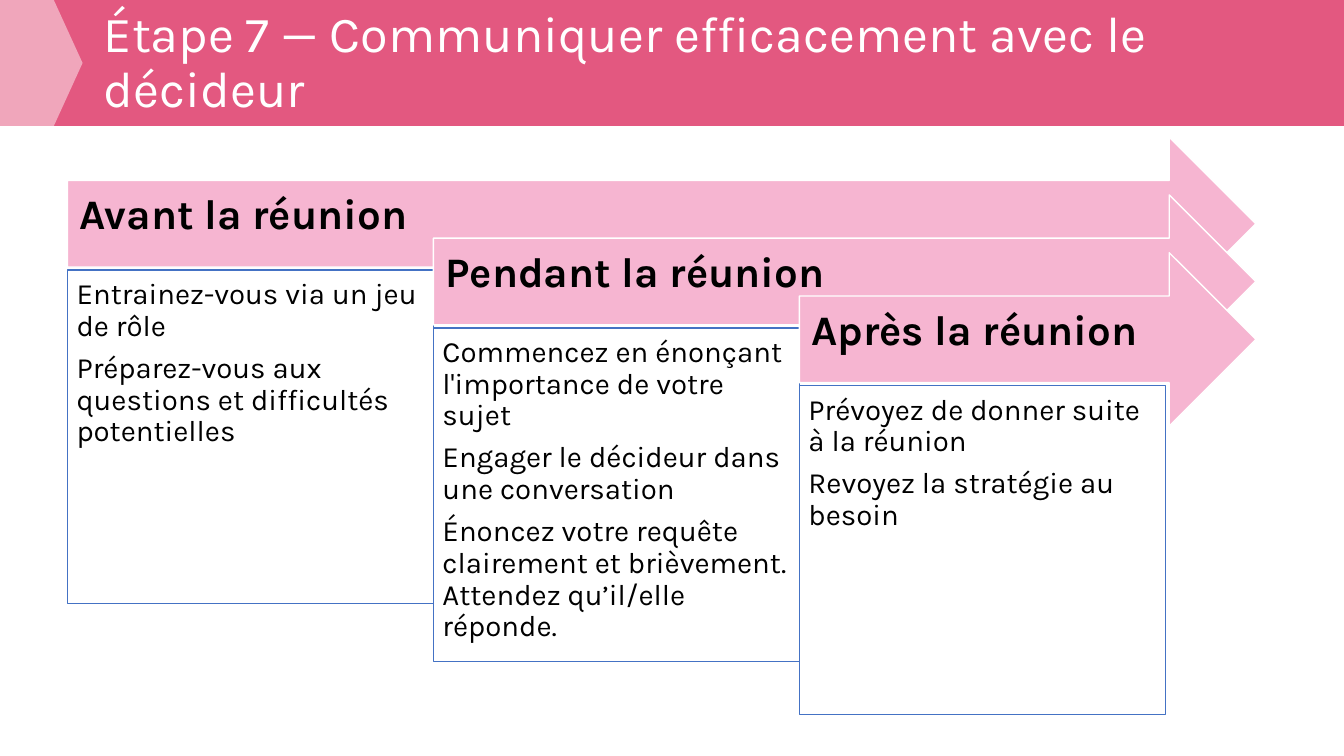
from lxml import etree
from pptx import Presentation
from pptx.dml.color import RGBColor
from pptx.enum.shapes import MSO_SHAPE
from pptx.enum.text import MSO_ANCHOR, PP_ALIGN
from pptx.oxml.ns import qn
from pptx.util import Pt

RECTANGLE = MSO_SHAPE.RECTANGLE
PENTAGON = MSO_SHAPE.PENTAGON
RIGHT_ARROW = MSO_SHAPE.RIGHT_ARROW
TOP, MIDDLE = MSO_ANCHOR.TOP, MSO_ANCHOR.MIDDLE
LEFT = PP_ALIGN.LEFT

TITLE = "Étape 7 — Communiquer efficacement avec le décideur"
# heading, advice, height of the advice box
PHASES = [
    ("Avant la réunion",
     ["Entrainez-vous via un jeu de rôle",
      "Préparez-vous aux questions et difficultés potentielles"], 238.3),
    ("Pendant la réunion",
     ["Commencez en énonçant l'importance de votre sujet",
      "Engager le décideur dans une conversation",
      "Énoncez votre requête clairement et brièvement. Attendez qu’il/elle réponde."], 238.3),
    ("Après la réunion",
     ["Prévoyez de donner suite à la réunion",
      "Revoyez la stratégie au besoin"], 234.7),
]

FONT = "Karla"
COLORS = {"banner": "E35880", "arrow": "F6B5D1", "white": "FFFFFF",
          "border": "4472C4", "text": "000000"}

SLIDE_W, SLIDE_H = 960, 540
BANNER_H = 90
PHASE_LEFT, PHASE_TOP = 48.2, 97.9
STEP_X, STEP_Y = 261.4, 41.3
ARROW_RIGHT, ARROW_H = 897.1, 123.8
ADVICE_DROP = 95


def rgb(name):
    return RGBColor.from_string(COLORS[name])


def add_block(slide, preset, box, fill, line=None):
    block = slide.shapes.add_shape(preset, *map(Pt, box))
    block.shadow.inherit = False
    block.fill.solid()
    block.fill.fore_color.rgb = rgb(fill)
    if line:
        block.line.color.rgb = rgb(line)
        block.line.width = Pt(1)
    else:
        block.line.fill.background()
    return block


def write(shape, paragraphs, size, color, anchor, insets, bold=False, after=0):
    """Fill a shape with paragraphs; insets run left, top, right, bottom."""
    frame = shape.text_frame
    frame.word_wrap = True
    frame.vertical_anchor = anchor
    (frame.margin_left, frame.margin_top,
     frame.margin_right, frame.margin_bottom) = map(Pt, insets)
    for i, text in enumerate(paragraphs):
        paragraph = frame.add_paragraph() if i else frame.paragraphs[0]
        paragraph.alignment = LEFT
        paragraph.line_spacing = 0.9
        paragraph.space_after = Pt(after)
        run = paragraph.add_run()
        run.text = text
        run.font.name = FONT
        run.font.size = Pt(size)
        run.font.bold = bold
        run.font.color.rgb = rgb(color)


def add_banner(slide):
    add_block(slide, RECTANGLE, (0, 0, SLIDE_W, BANNER_H), "banner")
    marker = add_block(slide, PENTAGON, (0, 0, 59, BANNER_H), "white")
    marker.adjustments[0] = 0.348
    marker_color = marker.fill._xPr.find(".//" + qn("a:srgbClr"))
    etree.SubElement(marker_color, qn("a:alpha"), val="47000")
    title = slide.shapes.add_textbox(Pt(67), Pt(14.4), Pt(830), Pt(62))
    write(title, [TITLE], 36, "white", MIDDLE, (7.2, 3.6, 7.2, 3.6))


def add_phase(slide, index, heading, advice, advice_h):
    left = PHASE_LEFT + index * STEP_X
    top = PHASE_TOP + index * STEP_Y
    arrow = add_block(slide, RIGHT_ARROW,
                      (left, top, ARROW_RIGHT - left, ARROW_H), "arrow", "white")
    write(arrow, [heading], 30, "text", MIDDLE, (8.6, 8.6, 20, 19.5), bold=True)
    advice_box = add_block(slide, RECTANGLE,
                           (left, top + ADVICE_DROP, STEP_X, advice_h), "white", "border")
    write(advice_box, advice, 21, "text", TOP, (6.5, 6.5, 6.5, 6.5), after=7.35)


def main():
    deck = Presentation()
    deck.slide_width, deck.slide_height = Pt(SLIDE_W), Pt(SLIDE_H)
    slide = deck.slides.add_slide(deck.slide_layouts[6])
    add_banner(slide)
    for index, phase in enumerate(PHASES):
        add_phase(slide, index, *phase)
    deck.save("out.pptx")


if __name__ == "__main__":
    main()
